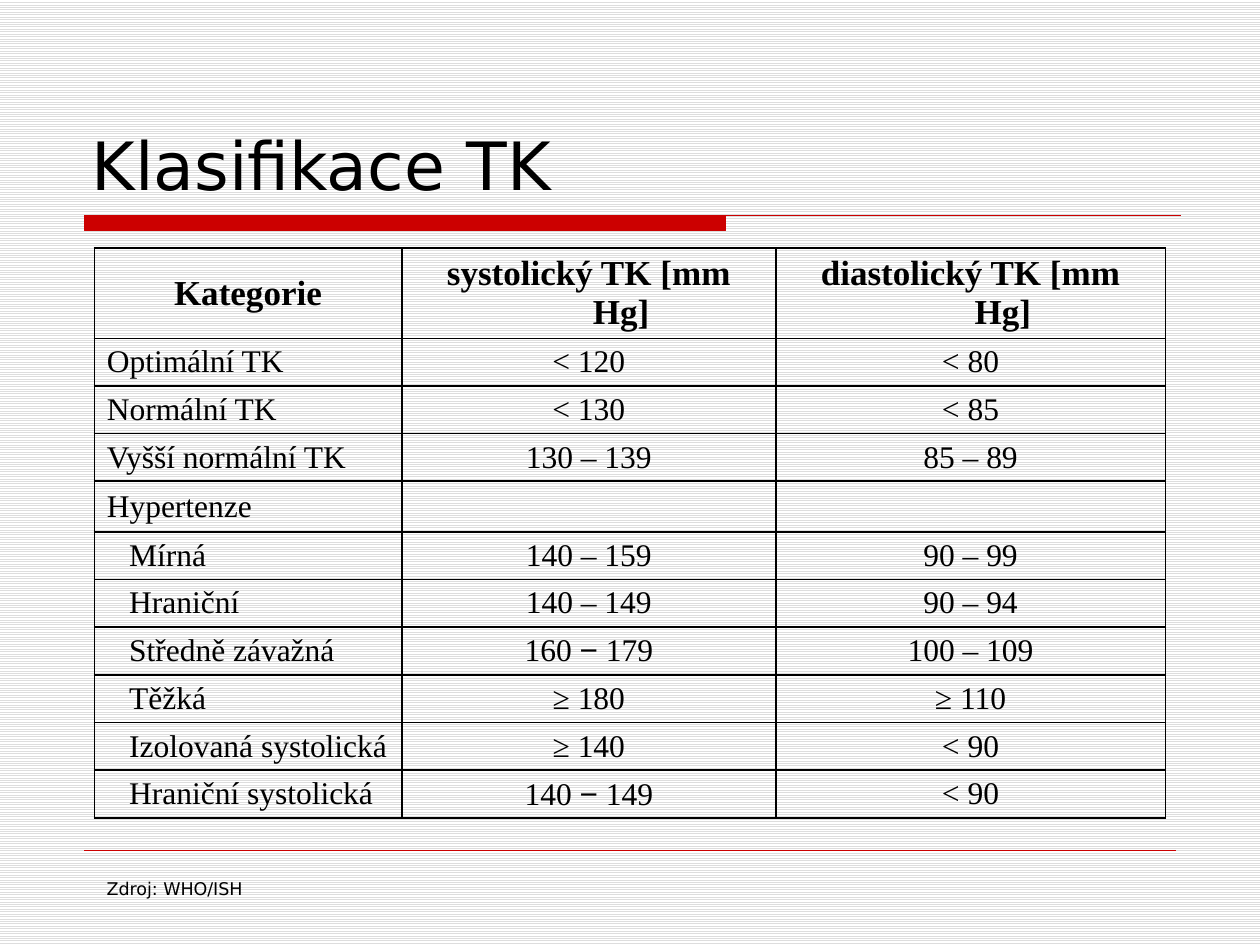
from dataclasses import dataclass

from lxml.etree import SubElement
from pptx import Presentation
from pptx.dml.color import RGBColor
from pptx.enum.dml import MSO_PATTERN
from pptx.enum.shapes import MSO_CONNECTOR
from pptx.enum.text import MSO_ANCHOR, MSO_AUTO_SIZE, PP_ALIGN
from pptx.oxml import parse_xml
from pptx.oxml.ns import nsdecls, qn
from pptx.util import Cm, Pt


@dataclass(frozen=True)
class Theme:
    ink: RGBColor = RGBColor(0, 0, 0)
    accent: RGBColor = RGBColor(0xCC, 0, 0)
    stripe: RGBColor = RGBColor(0xDD, 0xDD, 0xDD)
    paper: RGBColor = RGBColor(0xFF, 0xFF, 0xFF)
    heading_font: str = "DejaVu Sans"
    table_font: str = "Times New Roman"
    minus_font: str = "Arial"
    title_size: int = 38
    header_size: int = 20
    body_size: int = 18
    source_size: int = 10


@dataclass(frozen=True)
class Category:
    name: str
    systolic: str = ""
    diastolic: str = ""
    nested: bool = False


THEME = Theme()
HEADERS = ("Kategorie", "systolický TK [mm Hg]", "diastolický TK [mm Hg]")
CATEGORIES = (
    Category("Optimální TK", "< 120", "< 80"),
    Category("Normální TK", "< 130", "< 85"),
    Category("Vyšší normální TK", "130 – 139", "85 – 89"),
    Category("Hypertenze"),
    Category("Mírná", "140 – 159", "90 – 99", True),
    Category("Hraniční", "140 – 149", "90 – 94", True),
    Category("Středně závažná", "160 − 179", "100 – 109", True),
    Category("Těžká", "≥ 180", "≥ 110", True),
    Category("Izolovaná systolická", "≥ 140", "< 90", True),
    Category("Hraniční systolická", "140 − 149", "< 90", True),
)
COLUMN_WIDTHS = (Cm(6.2), Cm(7.54), Cm(7.85))
HEADER_HEIGHT, ROW_HEIGHT, GROUP_HEIGHT = Cm(1.57), Cm(0.96), Cm(1.02)
HANGING, NESTING = Cm(1.3), Cm(0.45)


def style_font(para, name: str, size: int, bold: bool = False) -> None:
    font = para.font
    font.name = name
    font.size = Pt(size)
    font.bold = bold
    font.color.rgb = THEME.ink


def draw_title(page) -> None:
    title = page.shapes.title
    title.left, title.top, title.width, title.height = Cm(1.6), Cm(0.85), Cm(22.23), Cm(3.38)
    frame = title.text_frame
    frame.text = "Klasifikace TK"
    frame.vertical_anchor = MSO_ANCHOR.BOTTOM
    frame.auto_size = MSO_AUTO_SIZE.NONE
    para = frame.paragraphs[0]
    para.alignment = PP_ALIGN.LEFT
    style_font(para, THEME.heading_font, THEME.title_size)


def draw_title_rule(page) -> None:
    left, top, bar_right, rule_right, bottom = Cm(1.7), Cm(4.34), Cm(14.63), Cm(23.8), Cm(4.65)
    builder = page.shapes.build_freeform(left, top)
    builder.add_line_segments([(bar_right, top), (bar_right, bottom), (left, bottom)])
    builder.move_to(left, top)
    builder.add_line_segments([(rule_right, top)], close=False)
    rule = builder.convert_to_shape()
    rule.shadow.inherit = False
    rule.fill.solid()
    rule.fill.fore_color.rgb = THEME.accent
    rule.line.color.rgb = THEME.accent
    rule.line.width = Pt(0.75)


def draw_footer_rule(page) -> None:
    height = Cm(17.15)
    rule = page.shapes.add_connector(MSO_CONNECTOR.STRAIGHT, Cm(1.7), height, Cm(23.7), height)
    rule.line.color.rgb = THEME.accent
    rule.line.width = Pt(0.25)
    SubElement(rule._element.spPr, qn("a:effectLst"))


def draw_borders(cell) -> None:
    properties = cell._tc.get_or_add_tcPr()
    for position, side in enumerate(("lnL", "lnR", "lnT", "lnB")):
        border = parse_xml(
            f'<a:{side} {nsdecls("a")} w="{Pt(1)}"><a:solidFill>'
            f'<a:srgbClr val="{THEME.ink}"/></a:solidFill></a:{side}>'
        )
        properties.insert(position, border)


def fill_cell(cell, text: str, size: int, bold: bool = False,
              centred: bool = True, nested: bool = False) -> None:
    cell.fill.background()
    draw_borders(cell)
    cell.vertical_anchor = MSO_ANCHOR.MIDDLE
    para = cell.text_frame.paragraphs[0]
    para.alignment = PP_ALIGN.CENTER if centred else PP_ALIGN.LEFT
    style_font(para, THEME.table_font, size, bold)
    margin = HANGING + (NESTING if nested else 0)
    properties = para._p.get_or_add_pPr()
    properties.set("marL", str(margin))
    properties.set("indent", str(-HANGING))
    before, minus, after = text.partition("−")
    for part in filter(None, (before, minus, after)):
        span = para.add_run()
        span.text = part
        if part == "−":
            span.font.name = THEME.minus_font


def draw_table(page) -> None:
    heights = [HEADER_HEIGHT] + [
        ROW_HEIGHT if category.systolic else GROUP_HEIGHT for category in CATEGORIES
    ]
    frame = page.shapes.add_table(
        len(heights), len(HEADERS), Cm(1.9), Cm(5), sum(COLUMN_WIDTHS), sum(heights)
    )
    table = frame.table
    table.first_row = False
    table.horz_banding = False
    for column, width in zip(table.columns, COLUMN_WIDTHS):
        column.width = width
    for row, height in zip(table.rows, heights):
        row.height = height
    for index, header in enumerate(HEADERS):
        fill_cell(table.cell(0, index), header, THEME.header_size, bold=True)
    for index, category in enumerate(CATEGORIES, start=1):
        fill_cell(table.cell(index, 0), category.name, THEME.body_size,
                  centred=False, nested=category.nested)
        fill_cell(table.cell(index, 1), category.systolic, THEME.body_size)
        fill_cell(table.cell(index, 2), category.diastolic, THEME.body_size)


def draw_source(page) -> None:
    box = page.shapes.add_textbox(Cm(1.9), Cm(17.4), Cm(3.7), Cm(1.02))
    frame = box.text_frame
    frame.word_wrap = True
    frame.vertical_anchor = MSO_ANCHOR.MIDDLE
    frame.text = "Zdroj: WHO/ISH"
    style_font(frame.paragraphs[0], THEME.heading_font, THEME.source_size)


def main() -> None:
    deck = Presentation()
    deck.slide_width, deck.slide_height = Cm(25.4), Cm(19.05)
    page = deck.slides.add_slide(deck.slide_layouts[5])
    background = page.background.fill
    background.patterned()
    background.pattern = MSO_PATTERN.LIGHT_HORIZONTAL
    background.fore_color.rgb = THEME.stripe
    background.back_color.rgb = THEME.paper
    draw_title_rule(page)
    draw_footer_rule(page)
    draw_title(page)
    draw_table(page)
    draw_source(page)
    deck.save("out.pptx")


if __name__ == "__main__":
    main()
